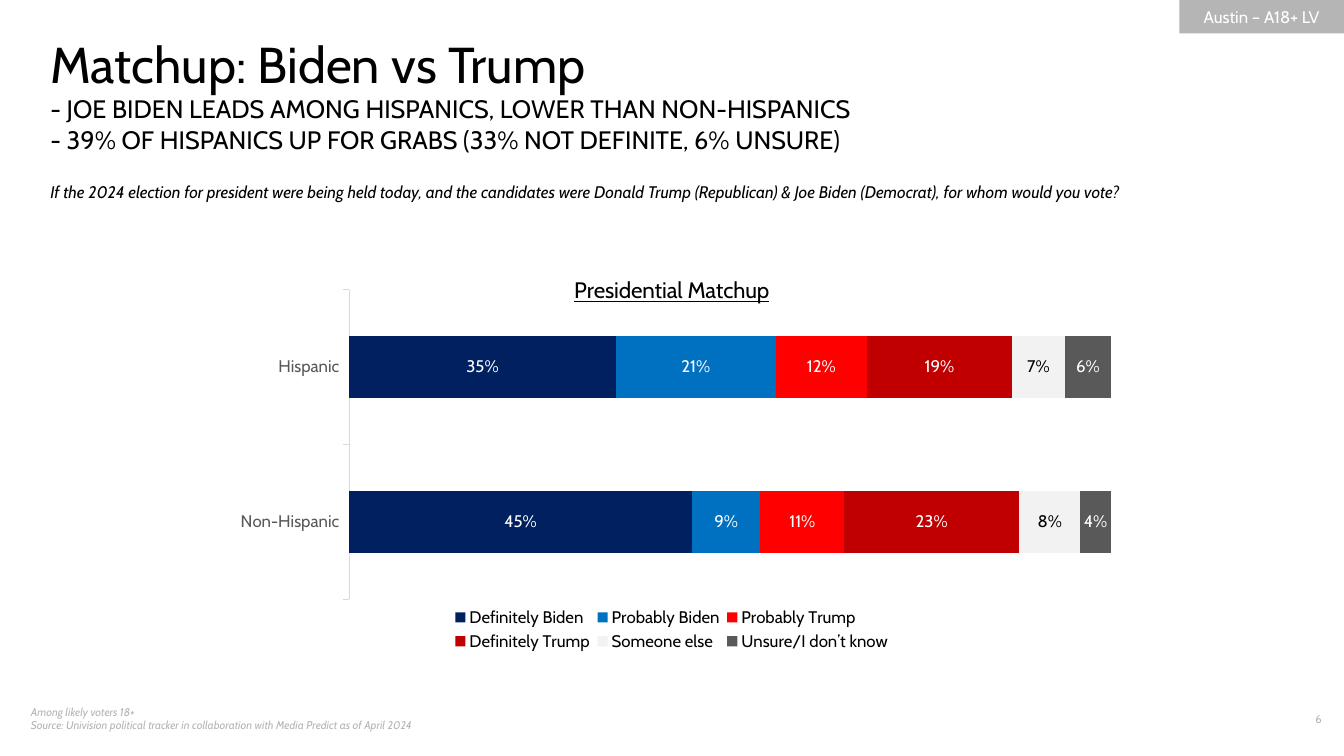
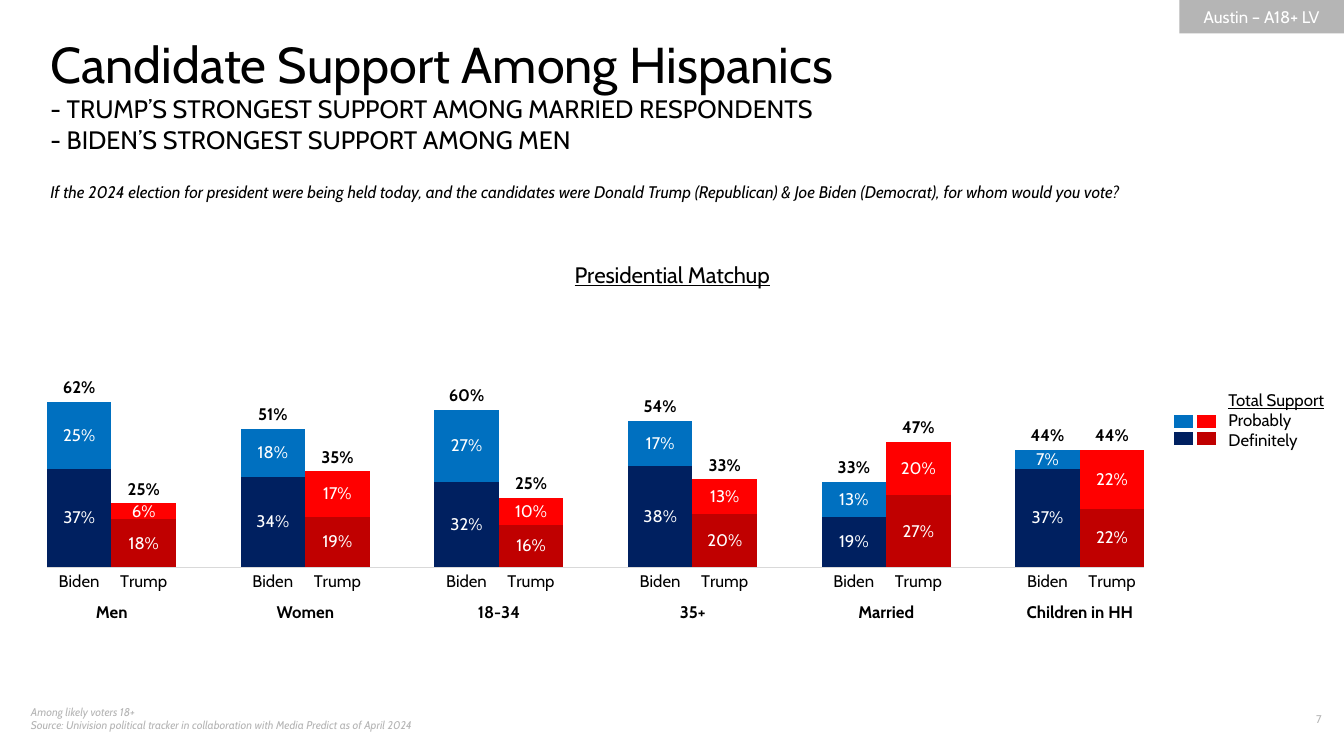
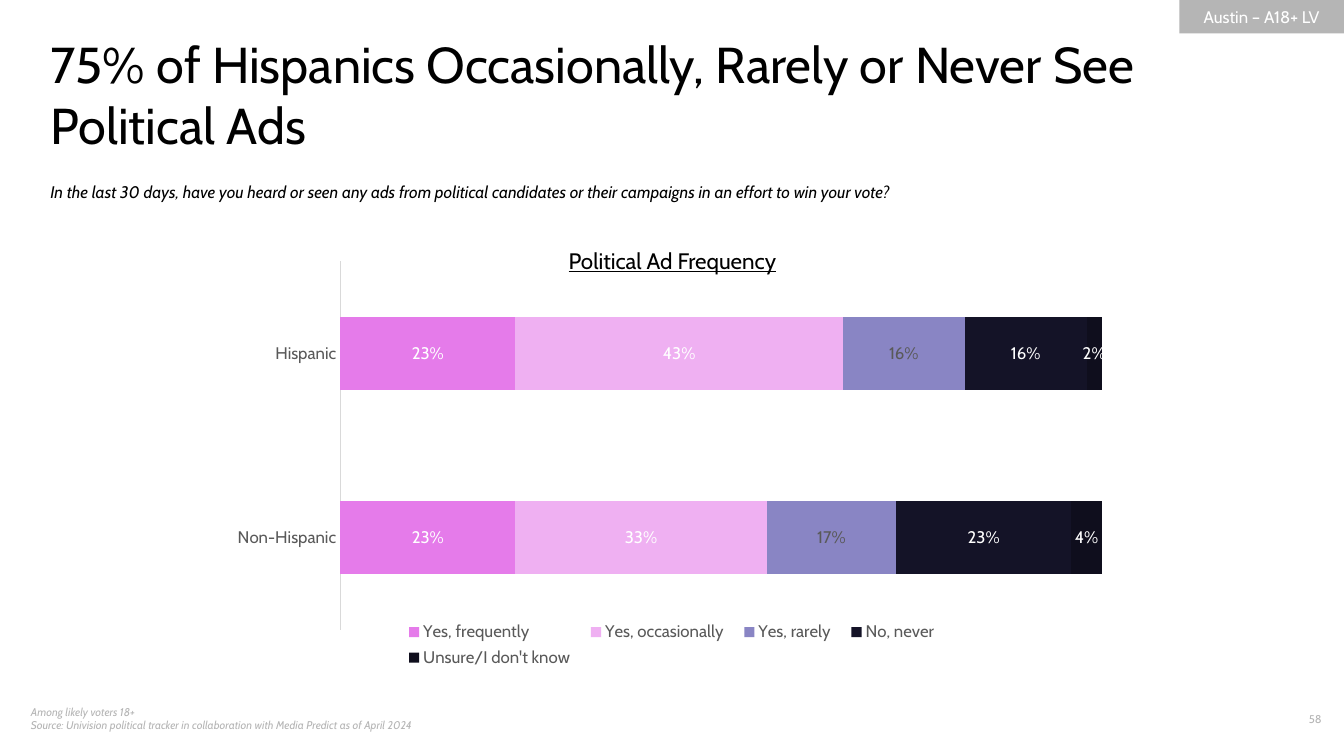
from lxml import etree
from pptx import Presentation
from pptx.chart.data import CategoryChartData
from pptx.dml.color import RGBColor
from pptx.enum.chart import XL_CHART_TYPE, XL_LABEL_POSITION, XL_LEGEND_POSITION, XL_TICK_MARK
from pptx.enum.shapes import MSO_SHAPE
from pptx.enum.text import MSO_ANCHOR, PP_ALIGN
from pptx.oxml import parse_xml
from pptx.oxml.ns import nsdecls, qn
from pptx.util import Cm, Pt

BAR = XL_CHART_TYPE.BAR_STACKED
COLUMN = XL_CHART_TYPE.COLUMN_STACKED
MIDDLE = XL_LABEL_POSITION.CENTER
BASE = XL_LABEL_POSITION.INSIDE_BASE
BELOW = XL_LEGEND_POSITION.BOTTOM
OUTER = XL_TICK_MARK.OUTSIDE
NONE = XL_TICK_MARK.NONE
RECT = MSO_SHAPE.RECTANGLE
CENTER = PP_ALIGN.CENTER
RIGHT = PP_ALIGN.RIGHT
ANCHOR = MSO_ANCHOR.MIDDLE

BLACK = RGBColor(0x00, 0x00, 0x00)
WHITE = RGBColor(0xFF, 0xFF, 0xFF)
SILVER = RGBColor(0xB5, 0xB5, 0xB5)
RULE = RGBColor(0xD9, 0xD9, 0xD9)
PALE = RGBColor(0xF2, 0xF2, 0xF2)
GRAY = RGBColor(0x59, 0x59, 0x59)
NAVY = RGBColor(0x00, 0x20, 0x60)
BLUE = RGBColor(0x00, 0x70, 0xC0)
RED = RGBColor(0xFF, 0x00, 0x00)
DARK = RGBColor(0xC0, 0x00, 0x00)
PINK = RGBColor(0xE5, 0x7B, 0xEA)
BLUSH = RGBColor(0xEF, 0xB0, 0xF2)
LILAC = RGBColor(0x89, 0x85, 0xC4)
INK = RGBColor(0x14, 0x13, 0x27)
NIGHT = RGBColor(0x0F, 0x0E, 0x1D)

WIDTH, HEIGHT = 33.87, 19.05
FONT = "Cabin"
RACE = "Presidential Matchup"
VOTE = ("If the 2024 election for president were being held today, and the candidates were "
        "Donald Trump (Republican) & Joe Biden (Democrat), for whom would you vote?")
ADS = ("In the last 30 days, have you heard or seen any ads from political candidates "
       "or their campaigns in an effort to win your vote?")
NOTES = ("Among likely voters 18+",
         "Source: Univision political tracker in collaboration with Media Predict as of April 2024")
ETHNIC = ("Hispanic", "Non-Hispanic")


def assign(item, **values):
    for name, value in values.items():
        setattr(item, name, value)


def style(font, size=12, color=BLACK, **extra):
    assign(font, name=FONT, size=Pt(size), **extra)
    font.color.rgb = color


def place(parent, box, inner=False):
    for old in parent.findall(qn("c:layout")):
        parent.remove(old)
    layout = etree.Element(qn("c:layout"))
    manual = etree.SubElement(layout, qn("c:manualLayout"))
    marks = [("layoutTarget", "inner")] if inner else []
    marks += [("xMode", "edge"), ("yMode", "edge"), *zip("xywh", box)]
    for tag, value in marks:
        etree.SubElement(manual, qn("c:" + tag)).set("val", str(value))
    if inner:
        parent.insert(0, layout)
    else:
        parent.find(qn("c:legendPos")).addnext(layout)


class Deck:
    """Holds the shared look and the current slide."""

    def __init__(self):
        self.show = Presentation()
        assign(self.show, slide_width=Cm(WIDTH), slide_height=Cm(HEIGHT))

    def page(self, number, title, points, question):
        self.slide = self.show.slides.add_slide(self.show.slide_layouts[6])
        band = self.slide.shapes.add_shape(RECT, *map(Cm, (29.72, 0, 4.15, 0.84)))
        band.shadow.inherit = False
        band.fill.solid()
        band.fill.fore_color.rgb = SILVER
        band.line.fill.background()
        band.text_frame.vertical_anchor = ANCHOR
        self.fill(band.text_frame, [("Austin – A18+ LV", {"color": WHITE})], CENTER)
        small = {"size": 8, "color": SILVER}
        self.text((0.53, 17.65, 12.98, 1.02), [(note, {**small, "italic": True}) for note in NOTES])
        self.text((31.32, 17.83, 2.24, 0.69), [(str(number), small)], RIGHT)
        lines = [(title, {"size": 36})] + [(point, {"size": 18}) for point in points]
        self.text((1.27, 0.84, 30.48, 3.07), lines, inset=0)
        self.text((1.27, 4.57, 30.48, 1.02), [(question, {"italic": True})], inset=0)

    def fill(self, frame, lines, align=None):
        for index, (words, look) in enumerate(lines):
            para = frame.add_paragraph() if index else frame.paragraphs[0]
            para.alignment = align
            run = para.add_run()
            run.text = words
            style(run.font, **look)

    def text(self, box, lines, align=None, inset=None, anchor=None):
        frame = self.slide.shapes.add_textbox(*map(Cm, box)).text_frame
        assign(frame, word_wrap=True, vertical_anchor=anchor)
        if inset is not None:
            assign(frame, **{"margin_" + side: Cm(inset) for side in ("left", "top", "right", "bottom")})
        self.fill(frame, lines, align)

    def table(self, left, top, widths, heights):
        shape = self.slide.shapes.add_table(
            len(heights), len(widths), *map(Cm, (left, top, sum(widths), sum(heights))))
        grid = shape.table
        assign(grid, first_row=False, horz_banding=False)
        for column, width in zip(grid.columns, widths):
            column.width = Cm(width)
        for row, height in zip(grid.rows, heights):
            row.height = Cm(height)
        for cell in grid.iter_cells():
            assign(cell, margin_left=0, margin_right=0, vertical_anchor=ANCHOR)
            cell.fill.background()
        return grid

    def swatch(self, left, top, colors):
        grid = self.table(left, top, [0.58] * 2, [0.43] * 2)
        for cell, color in zip(grid.iter_cells(), colors):
            assign(cell, margin_top=0, margin_bottom=0)
            cell.fill.solid()
            cell.fill.fore_color.rgb = color
            mark = etree.SubElement(cell.text_frame.paragraphs[0]._p, qn("a:endParaRPr"))
            mark.set("sz", "100")
            props = cell._tc.get_or_add_tcPr()
            for index, side in enumerate(("lnL", "lnR", "lnT", "lnB")):
                props.insert(index, parse_xml(
                    f'<a:{side} {nsdecls("a")} w="{Pt(3)}"><a:solidFill>'
                    f'<a:srgbClr val="{WHITE}"/></a:solidFill></a:{side}>'))

    def chart(self, kind, box, plot, names, rows, gap, tick=NONE, title=None, ink=BLACK, legend=None):
        data = CategoryChartData(number_format="0%")
        data.categories = names
        for name, values, *_ in rows:
            data.add_series(name, values)
        chart = self.slide.shapes.add_chart(kind, *map(Cm, box), data).chart
        style(chart.font, 10)
        assign(chart, has_title=bool(title), has_legend=bool(legend))
        if title:
            self.fill(chart.chart_title.text_frame, [(title, {"size": 16, "bold": False, "underline": True})])
        if legend:
            assign(chart.legend, position=BELOW, include_in_layout=False)
            style(chart.legend.font, color=ink)
            place(chart.legend._element, legend)
        place(chart._chartSpace.chart.plotArea, plot, True)
        assign(chart.plots[0], gap_width=gap, overlap=100, vary_by_categories=False)
        assign(chart.value_axis, visible=False, has_major_gridlines=False,
               minimum_scale=0, maximum_scale=1)
        axis = chart.category_axis
        assign(axis, major_tick_mark=tick, minor_tick_mark=NONE, reverse_order=kind == BAR)
        style(axis.tick_labels.font, color=GRAY if kind == BAR else BLACK)
        axis.format.line.width = Pt(0.75)
        axis.format.line.color.rgb = RULE
        for series, (_, values, colors, tone) in zip(chart.plots[0].series, rows):
            self.paint(series, values, colors, tone)

    def paint(self, series, values, colors, tone):
        if not colors:
            series.format.fill.background()
        else:
            series.format.fill.solid()
            series.format.fill.fore_color.rgb = colors[0]
        if len(colors) > 1:
            for index, value in enumerate(values):
                if value is not None:
                    fill = series.points[index].format.fill
                    fill.solid()
                    fill.fore_color.rgb = colors[index % 3]
        labels = series.data_labels
        assign(labels, show_value=True, number_format="0%", number_format_is_linked=False,
               position=MIDDLE if colors else BASE)
        style(labels.font, color=tone, bold=not colors)


def spread(pairs):
    return [value for pair in pairs for value in (*pair, None)][:-1]


def main():
    deck = Deck()

    deck.page(6, "Matchup: Biden vs Trump",
              ["- JOE BIDEN LEADS AMONG HISPANICS, LOWER THAN NON-HISPANICS",
               "- 39% OF HISPANICS UP FOR GRABS (33% NOT DEFINITE, 6% UNSURE)"], VOTE)
    deck.chart(BAR, (5.64, 6.5, 22.58, 10.01), (0.14, 0.08, 0.85, 0.78), ETHNIC, [
        ("Definitely Biden", (0.35, 0.45), [NAVY], WHITE),
        ("Probably Biden", (0.21, 0.09), [BLUE], WHITE),
        ("Probably Trump", (0.12, 0.11), [RED], WHITE),
        ("Definitely Trump", (0.19, 0.23), [DARK], WHITE),
        ("Someone else", (0.07, 0.08), [PALE], BLACK),
        ("Unsure/I don’t know", (0.06, 0.04), [GRAY], WHITE),
    ], 150, OUTER, RACE, legend=(0.25, 0.87, 0.5, 0.13))

    deck.page(7, "Candidate Support Among Hispanics",
              ["- TRUMP’S STRONGEST SUPPORT AMONG MARRIED RESPONDENTS",
               "- BIDEN’S STRONGEST SUPPORT AMONG MEN"], VOTE)
    deck.text((30.71, 9.53, 3.18, 2.11),
              [("Total Support", {"underline": True}), ("Probably", {}), ("Definitely", {})], anchor=ANCHOR)
    deck.swatch(29.54, 10.41, (BLUE, RED, NAVY, DARK))
    groups = ("Men", "Women", "18-34", "35+", "Married", "Children in HH")
    sure = spread([(0.37, 0.18), (0.34, 0.19), (0.32, 0.16), (0.38, 0.2), (0.19, 0.27), (0.37, 0.22)])
    likely = spread([(0.25, 0.06), (0.18, 0.17), (0.27, 0.1), (0.17, 0.13), (0.13, 0.2), (0.07, 0.22)])
    total = spread([(0.62, 0.25), (0.51, 0.35), (0.6, 0.25), (0.54, 0.33), (0.33, 0.47), (0.44, 0.44)])
    names = [name or " " for name in spread([("Biden", "Trump")] * len(groups))]
    deck.chart(COLUMN, (0.86, 6.12, 32.16, 9.09), (0.01, 0.16, 0.86, 0.74), names, [
        ("Definitely", sure, [NAVY, DARK], WHITE),
        ("Probably", likely, [BLUE, RED], WHITE),
        ("Total Support", total, [], BLACK),
    ], 0, title=RACE)
    grid = deck.table(1.19, 14.91, ([3.25, 1.63] * len(groups))[:-1], [1.04])
    for index, group in enumerate(groups):
        deck.fill(grid.cell(0, 2 * index).text_frame, [(group, {"bold": True})], CENTER)

    deck.page(58, "75% of Hispanics Occasionally, Rarely or Never See Political Ads", [], ADS)
    deck.text((10.67, 5.54, 12.55, 2.06),
              [("Political Ad Frequency", {"size": 16, "underline": True})], CENTER, anchor=ANCHOR)
    deck.chart(BAR, (5.64, 6.15, 22.58, 10.92), (0.13, 0.04, 0.85, 0.85), ETHNIC, [
        ("Yes, frequently", (0.23, 0.23), [PINK], WHITE),
        ("Yes, occasionally", (0.43, 0.33), [BLUSH], WHITE),
        ("Yes, rarely", (0.16, 0.17), [LILAC], GRAY),
        ("No, never", (0.16, 0.23), [INK], WHITE),
        ("Unsure/I don't know", (0.02, 0.04), [NIGHT], WHITE),
    ], 150, ink=GRAY, legend=(0.19, 0.86, 0.62, 0.13))

    deck.show.save("out.pptx")


if __name__ == "__main__":
    main()
